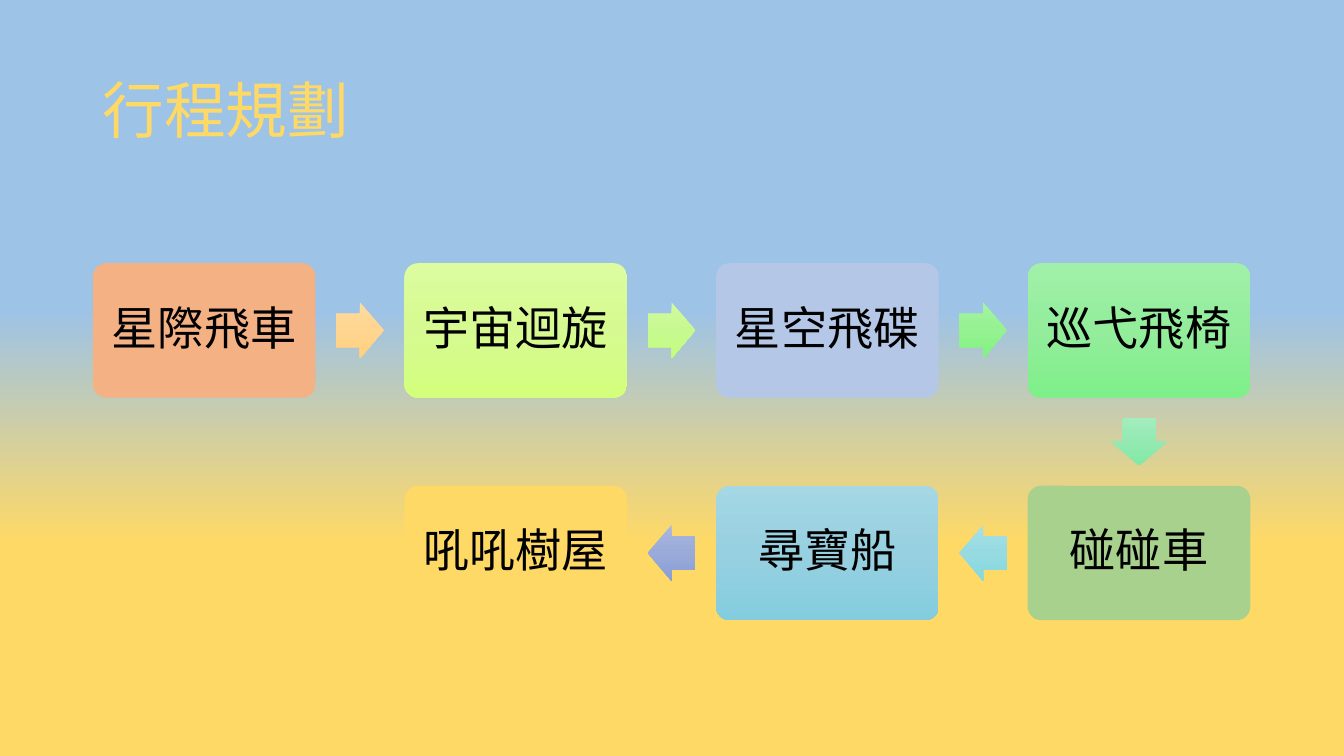
import copy

import pptx
import pptx.dml.color
import pptx.enum.shapes
import pptx.enum.text
import pptx.oxml.ns
import pptx.util

Pt = pptx.util.Pt
RGB = pptx.dml.color.RGBColor
Shape = pptx.enum.shapes.MSO_SHAPE
Align = pptx.enum.text.PP_ALIGN
Anchor = pptx.enum.text.MSO_ANCHOR
qn = pptx.oxml.ns.qn

SKY = RGB(0x9D, 0xC3, 0xE6)
GOLD = RGB(0xFF, 0xD9, 0x66)
BLACK = RGB(0, 0, 0)
PEACH = RGB(0xF4, 0xB1, 0x83)
LILAC = RGB(0xB4, 0xC7, 0xE7)
SAGE = RGB(0xA9, 0xD1, 0x8E)
# Gradients, from top to bottom
LIME = RGB(0xDC, 0xFC, 0x9F), RGB(0xD6, 0xFA, 0x91), RGB(0xD3, 0xFF, 0x7C)
GREEN = RGB(0xA1, 0xF0, 0xA9), RGB(0x93, 0xED, 0x9B), RGB(0x7F, 0xEF, 0x89)
AQUA = RGB(0xA5, 0xD7, 0xE5), RGB(0x97, 0xD0, 0xE0), RGB(0x84, 0xCD, 0xDF)

TITLE = "行程規劃"
RIDES = [
    ("星際飛車", PEACH),
    ("宇宙迴旋", LIME),
    ("星空飛碟", LILAC),
    ("巡弋飛椅", GREEN),
    ("碰碰車", SAGE),
    ("尋寶船", AQUA),
    ("吼吼樹屋", GOLD),
]
ARROWS = [
    (RGB(0xFF, 0xDB, 0x9E), RGB(0xFF, 0xD5, 0x90), RGB(0xFF, 0xD0, 0x7C)),
    (RGB(0xD0, 0xFB, 0x9F), RGB(0xC7, 0xF9, 0x91), RGB(0xC2, 0xFE, 0x7C)),
    (RGB(0xA3, 0xF4, 0xA0), RGB(0x95, 0xF1, 0x92), RGB(0x81, 0xF4, 0x7E)),
    (RGB(0xA2, 0xED, 0xBD), RGB(0x94, 0xE9, 0xB2), RGB(0x80, 0xEA, 0xA6)),
    (RGB(0xA5, 0xE0, 0xE6), RGB(0x97, 0xDA, 0xE1), RGB(0x83, 0xD9, 0xE0)),
    (RGB(0xA8, 0xB7, 0xDF), RGB(0x9A, 0xAB, 0xD9), RGB(0x88, 0x9E, 0xD7)),
]

COLS = 4
CARD_W, CARD_H = 159, 96
STEP_X, STEP_Y = 222.6, 159
LEFT, TOP = 66.3, 188
ARROW_W, ARROW_H = 34, 40


def shade(fill, owner, stops):
    """Fill with a vertical gradient of (position, colour) stops."""
    fill.gradient()
    fill.gradient_angle = 270
    grad = next(owner.iter(qn("a:gradFill")))
    grad.set("rotWithShape", "0")
    marks = grad.find(qn("a:gsLst"))
    while len(marks) < len(stops):
        marks.append(copy.deepcopy(marks[0]))
    for mark, (place, tone) in zip(fill.gradient_stops, stops):
        mark.position = place
        mark.color.rgb = tone


def write(shape, text, size, font, color, align, margin):
    frame = shape.text_frame
    frame.word_wrap = True
    frame.vertical_anchor = Anchor.MIDDLE
    frame.margin_left = frame.margin_right = Pt(margin)
    par = frame.paragraphs[0]
    par.alignment = align
    par.line_spacing = 0.9
    run = par.add_run()
    run.text = text
    run.font.size = Pt(size)
    run.font.name = font
    run.font.color.rgb = color


def block(slide, kind, mid, size, paint, adjust):
    """Add a preset shape centred on mid, in one colour or a gradient."""
    (x, y), (w, h) = mid, size
    shape = slide.shapes.add_shape(
        kind, Pt(x - w / 2), Pt(y - h / 2), Pt(w), Pt(h))
    for i, value in enumerate(adjust):
        shape.adjustments[i] = value
    shape.shadow.inherit = False
    shape.line.fill.background()
    if isinstance(paint, RGB):
        shape.fill.solid()
        shape.fill.fore_color.rgb = paint
    else:
        shade(shape.fill, shape.element, list(zip((0, 0.5, 1), paint)))
    return shape


def centre(i):
    """Centre of card i; the second row runs back from right to left."""
    row, col = divmod(i, COLS)
    if row % 2:
        col = COLS - 1 - col
    return (LEFT + CARD_W / 2 + col * STEP_X,
            TOP + CARD_H / 2 + row * STEP_Y)


def main():
    deck = pptx.Presentation()
    deck.slide_width, deck.slide_height = Pt(960), Pt(540)
    slide = deck.slides.add_slide(deck.slide_layouts[5])
    shade(slide.background.fill, slide.element, [(0.41, SKY), (0.72, GOLD)])

    title = slide.shapes.title
    title.left, title.top = Pt(66), Pt(28.8)
    title.width, title.height = Pt(828), Pt(104.4)
    write(title, TITLE, size=44, font="Noto Sans CJK SC", color=GOLD,
          align=Align.LEFT, margin=7.2)

    for i, (name, paint) in enumerate(RIDES):
        card = block(slide, Shape.ROUNDED_RECTANGLE, centre(i),
                     (CARD_W, CARD_H), paint, [0.1])
        write(card, name, size=33, font="Calibri", color=BLACK,
              align=Align.CENTER, margin=9.5)

    for i, paint in enumerate(ARROWS):
        (x1, y1), (x2, y2) = centre(i), centre(i + 1)
        arrow = block(slide, Shape.RIGHT_ARROW, ((x1 + x2) / 2, (y1 + y2) / 2),
                      (ARROW_W, ARROW_H), paint, [0.6, 0.5])
        arrow.rotation = 90 if y2 > y1 else 180 if x2 < x1 else 0

    deck.save("out.pptx")


if __name__ == "__main__":
    main()
